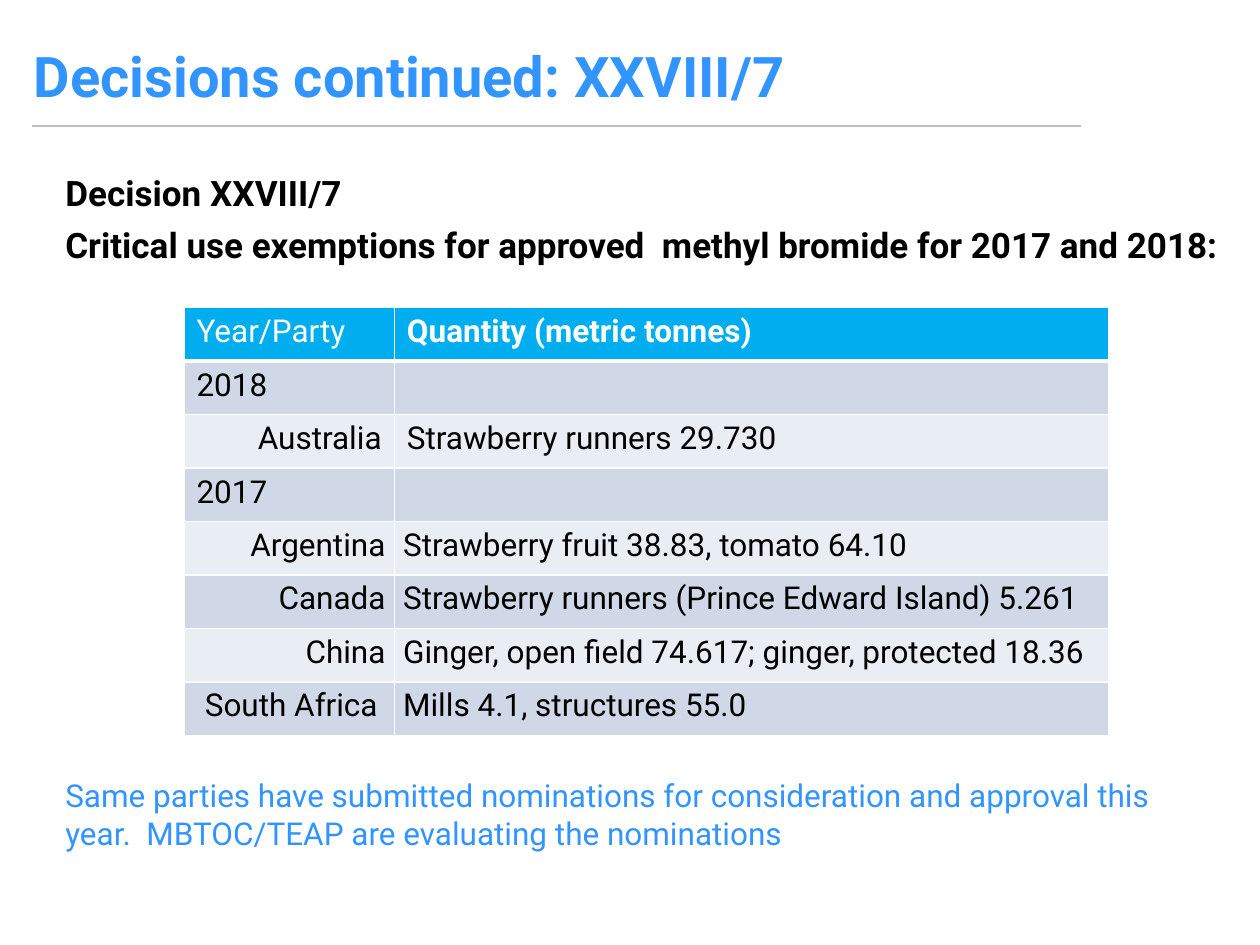
from dataclasses import dataclass

import pptx
import pptx.dml.color
import pptx.enum.shapes
import pptx.enum.text
import pptx.oxml
import pptx.oxml.ns
import pptx.util

RGBColor = pptx.dml.color.RGBColor
ALIGN = pptx.enum.text.PP_ALIGN
Inches, Pt = pptx.util.Inches, pptx.util.Pt

BLUE = RGBColor(0x31, 0x94, 0xFF)
HEADER_BLUE = RGBColor(0x00, 0xAE, 0xEF)
DARK_BAND = RGBColor(0xD0, 0xD8, 0xE8)
LIGHT_BAND = RGBColor(0xE9, 0xED, 0xF4)
RULE_GREY = RGBColor(0xBF, 0xBF, 0xBF)
BLACK = RGBColor(0, 0, 0)
WHITE = RGBColor(255, 255, 255)

FONT = "Roboto"
SLIDE_WIDTH, SLIDE_HEIGHT = Inches(10), Inches(7.5)
COLUMN_WIDTHS = (Inches(1.67), Inches(5.67))
TABLE_HEIGHT = Inches(3.4)


@dataclass(frozen=True)
class TextBlock:
    left: float
    top: float
    width: float
    height: float
    lines: tuple[str, ...]
    size: int
    color: RGBColor
    bold: bool = False
    space_after: int = 0


@dataclass(frozen=True)
class PartyRow:
    party: str
    quantity: str = ""
    tight: bool = False  # narrow margins and looser line spacing


TEXT_BLOCKS = (
    TextBlock(0.17, 0.28, 9.83, 0.64, ("Decisions continued: XXVIII/7",), 32, BLUE, True),
    TextBlock(0.42, 1.31, 9.42, 1.58, (
        "Decision XXVIII/7",
        "Critical use exemptions for approved  methyl bromide for 2017 and 2018:",
    ), 20, BLACK, True, 6),
    TextBlock(0.42, 6.11, 8.83, 0.71, (
        "Same parties have submitted nominations for consideration and approval "
        "this year.  MBTOC/TEAP are evaluating the nominations",
    ), 18, BLUE),
)

PARTY_ROWS = (
    PartyRow("Year/Party", "Quantity (metric tonnes)"),
    PartyRow("2018"),
    PartyRow("Australia", "Strawberry runners 29.730"),
    PartyRow("2017"),
    PartyRow("Argentina", "Strawberry fruit 38.83, tomato 64.10", True),
    PartyRow("Canada", "Strawberry runners (Prince Edward Island) 5.261", True),
    PartyRow("China", "Ginger, open field 74.617; ginger, protected 18.36", True),
    PartyRow("South Africa ", "Mills 4.1, structures 55.0", True),
)


def write_paragraph(paragraph, text: str, size: int, color: RGBColor, bold: bool) -> None:
    paragraph.text = text
    paragraph.font.name = FONT
    paragraph.font.size = Pt(size)
    paragraph.font.color.rgb = color
    paragraph.font.bold = bold


def add_text_block(slide, block: TextBlock) -> None:
    box = slide.shapes.add_textbox(
        Inches(block.left), Inches(block.top), Inches(block.width), Inches(block.height))
    frame = box.text_frame
    frame.word_wrap = True
    for index, line in enumerate(block.lines):
        paragraph = frame.add_paragraph() if index else frame.paragraphs[0]
        write_paragraph(paragraph, line, block.size, block.color, block.bold)
        paragraph.space_after = Pt(block.space_after)


def set_borders(cell, bottom_width: int) -> None:
    properties = cell._tc.get_or_add_tcPr()
    widths = {"lnL": 1, "lnR": 1, "lnT": 1, "lnB": bottom_width}
    # Border lines come before the fill in the cell properties
    for position, (side, width) in enumerate(widths.items()):
        properties.insert(position, pptx.oxml.parse_xml(
            f'<a:{side} {pptx.oxml.ns.nsdecls("a")} w="{Pt(width)}">'
            f'<a:solidFill><a:srgbClr val="{WHITE}"/></a:solidFill></a:{side}>'))


def add_party_table(slide) -> None:
    table = slide.shapes.add_table(
        len(PARTY_ROWS), len(COLUMN_WIDTHS), Inches(1.46), Inches(2.44),
        sum(COLUMN_WIDTHS), TABLE_HEIGHT).table
    for column, width in zip(table.columns, COLUMN_WIDTHS):
        column.width = width
    for row_index, row in enumerate(PARTY_ROWS):
        is_header = row_index == 0
        band = HEADER_BLUE if is_header else DARK_BAND if row_index % 2 else LIGHT_BAND
        for column_index, text in enumerate((row.party, row.quantity)):
            cell = table.cell(row_index, column_index)
            cell.fill.solid()
            cell.fill.fore_color.rgb = band
            set_borders(cell, 3 if is_header else 1)
            paragraph = cell.text_frame.paragraphs[0]
            write_paragraph(paragraph, text, 18, WHITE if is_header else BLACK,
                            is_header and column_index == 1)
            # Party names sit right, years and the heading sit left
            if column_index == 0 and row.quantity and not is_header:
                paragraph.alignment = ALIGN.RIGHT
            if row.tight:
                paragraph.line_spacing = 1.15
                cell.margin_left = cell.margin_right = Inches(0.07)
                cell.margin_top = cell.margin_bottom = 0


def add_title_rule(slide) -> None:
    rule = slide.shapes.add_connector(
        pptx.enum.shapes.MSO_CONNECTOR.STRAIGHT,
        Inches(0.25), Inches(1), Inches(8.58), Inches(1))
    rule.line.color.rgb = RULE_GREY
    rule.line.width = Pt(1)
    rule._element.spPr.append(
        pptx.oxml.parse_xml(f'<a:effectLst {pptx.oxml.ns.nsdecls("a")}/>'))


def main() -> None:
    presentation = pptx.Presentation()
    presentation.slide_width, presentation.slide_height = SLIDE_WIDTH, SLIDE_HEIGHT
    slide = presentation.slides.add_slide(presentation.slide_layouts[6])
    # Title, decision and closing note
    for block in TEXT_BLOCKS:
        add_text_block(slide, block)
    # Exempted quantities by year and party
    add_party_table(slide)
    # Line under the title
    add_title_rule(slide)
    presentation.save("out.pptx")


if __name__ == "__main__":
    main()
